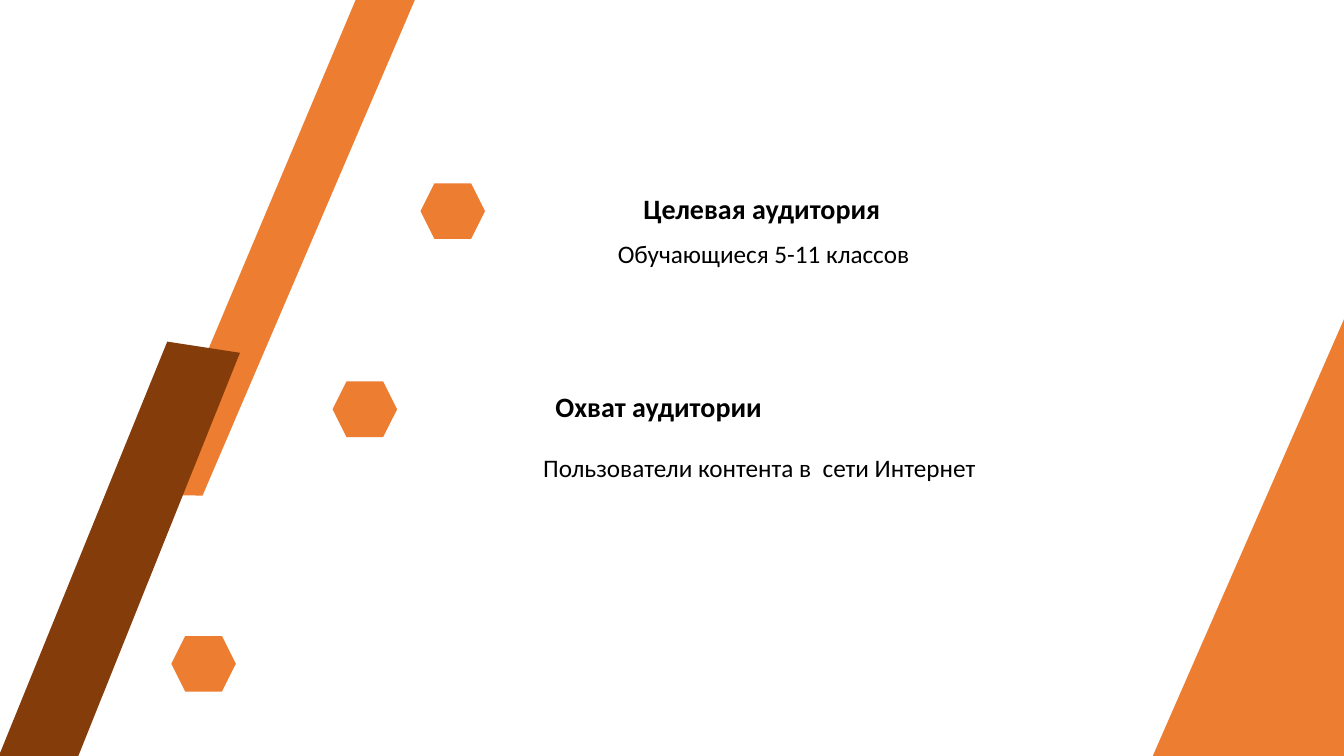
import pptx
import pptx.dml.color
import pptx.enum.shapes
import pptx.enum.text
import pptx.util

Pt = pptx.util.Pt
SHAPES = pptx.enum.shapes.MSO_SHAPE
COLOURS = {"orange": "ED7D31", "brown": "843C0B", "text": "000000"}
FONT = "Calibri"
WIDTH, HEIGHT = 960, 540


def paint(shape, colour):
    """Give a shape a flat fill with no line or shadow."""
    shape.shadow.inherit = False
    shape.fill.solid()
    shape.fill.fore_color.rgb = pptx.dml.color.RGBColor.from_string(COLOURS[colour])
    shape.line.fill.background()


def add_band(page, left, top, corners, colour):
    """Draw a slanted band whose corners are relative to left and top."""
    points = [(Pt(left + x), Pt(top + y)) for x, y in corners]
    builder = page.shapes.build_freeform(*points[0], scale=1.0)
    builder.add_line_segments(points[1:], close=True)
    paint(builder.convert_to_shape(), colour)


def add_marker(page, left, top):
    """Draw a hexagon marker."""
    marker = page.shapes.add_shape(SHAPES.HEXAGON, Pt(left), Pt(top), Pt(46.1), Pt(39.7))
    paint(marker, "orange")


def add_corner(page, width, height):
    """Draw the triangle that fills the lower right corner of the slide."""
    corner = page.shapes.add_shape(
        SHAPES.ISOSCELES_TRIANGLE, Pt(WIDTH - width), Pt(HEIGHT - height), Pt(width), Pt(height))
    corner.adjustments[0] = 1
    paint(corner, "orange")


def add_text(page, left, top, width, height, text, size, bold=False):
    """Place one line of text in a wrapping box."""
    box = page.shapes.add_textbox(Pt(left), Pt(top), Pt(width), Pt(height))
    frame = box.text_frame
    frame.word_wrap = True
    frame.auto_size = pptx.enum.text.MSO_AUTO_SIZE.SHAPE_TO_FIT_TEXT
    frame.text = text
    font = frame.paragraphs[0].runs[0].font
    font.name, font.size, font.bold = FONT, Pt(size), bold
    font.color.rgb = pptx.dml.color.RGBColor.from_string(COLOURS["text"])


def add_topic(page, left, top, heading, detail, shift, drop, detail_height):
    """Place a marker, its heading and the detail below, from the marker's corner."""
    add_marker(page, left, top)
    add_text(page, left + 152, top + 2.5, 204, 31.5, heading, 20, True)
    add_text(page, left + shift, top + drop, 330.5, detail_height, detail, 18)


def build_audience_slide(deck):
    """Build the slide about the audience and its reach."""
    page = deck.slides.add_slide(deck.slide_layouts[6])
    add_band(page, 105, -7, [(152, 0), (193.1, 2.9), (39.7, 361), (0, 360.5)], "orange")
    add_band(page, -5.8, 244, [(125.3, 0), (177.2, 8), (54.8, 313.3), (0, 308.2)], "brown")
    add_corner(page, 136.6, 312)
    add_topic(page, 300.4, 131, "Целевая аудитория", "Обучающиеся 5-11 классов", 133.8, 36, 51)
    add_topic(page, 237.6, 272.5, "Охват аудитории",
              "Пользователи контента в  сети Интернет", 143.3, 47.2, 29)
    add_marker(page, 122.4, 454.3)


def main():
    """Create and save the deck."""
    deck = pptx.Presentation()
    deck.slide_width, deck.slide_height = Pt(WIDTH), Pt(HEIGHT)
    build_audience_slide(deck)
    deck.save("out.pptx")


if __name__ == "__main__":
    main()
